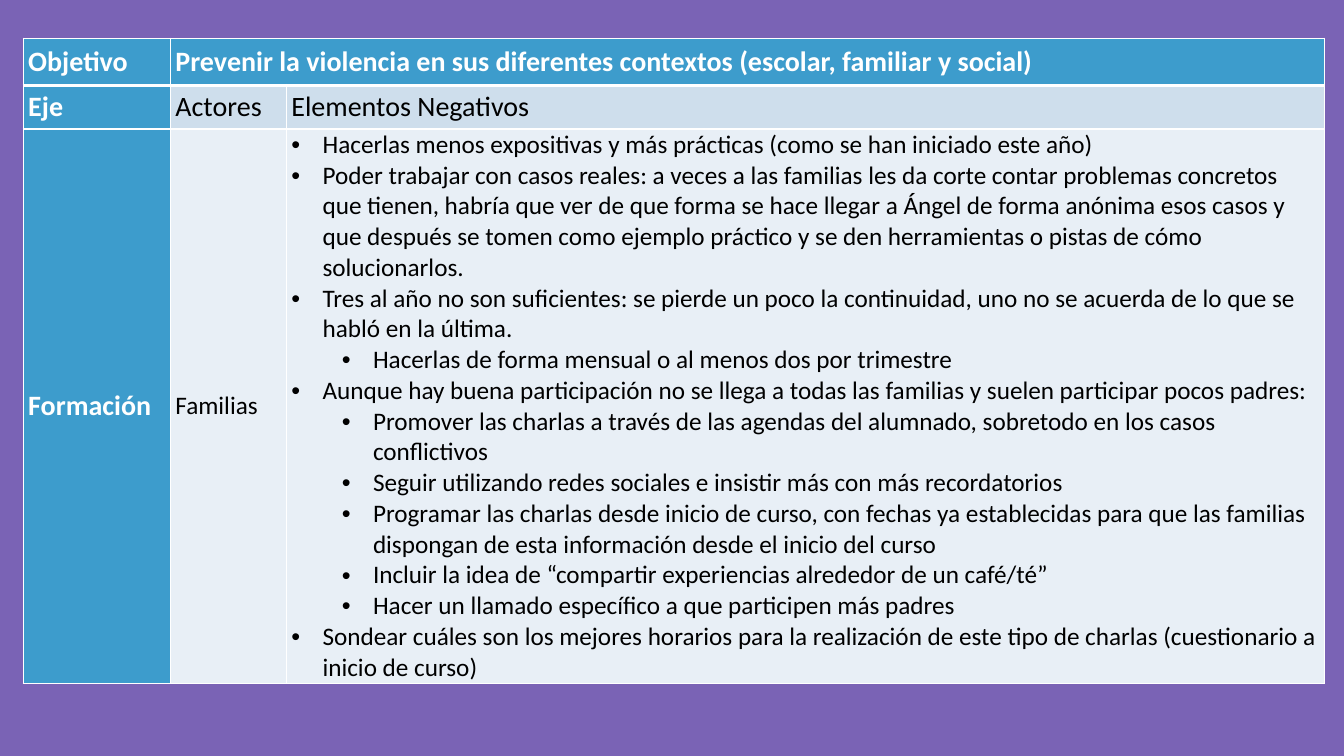
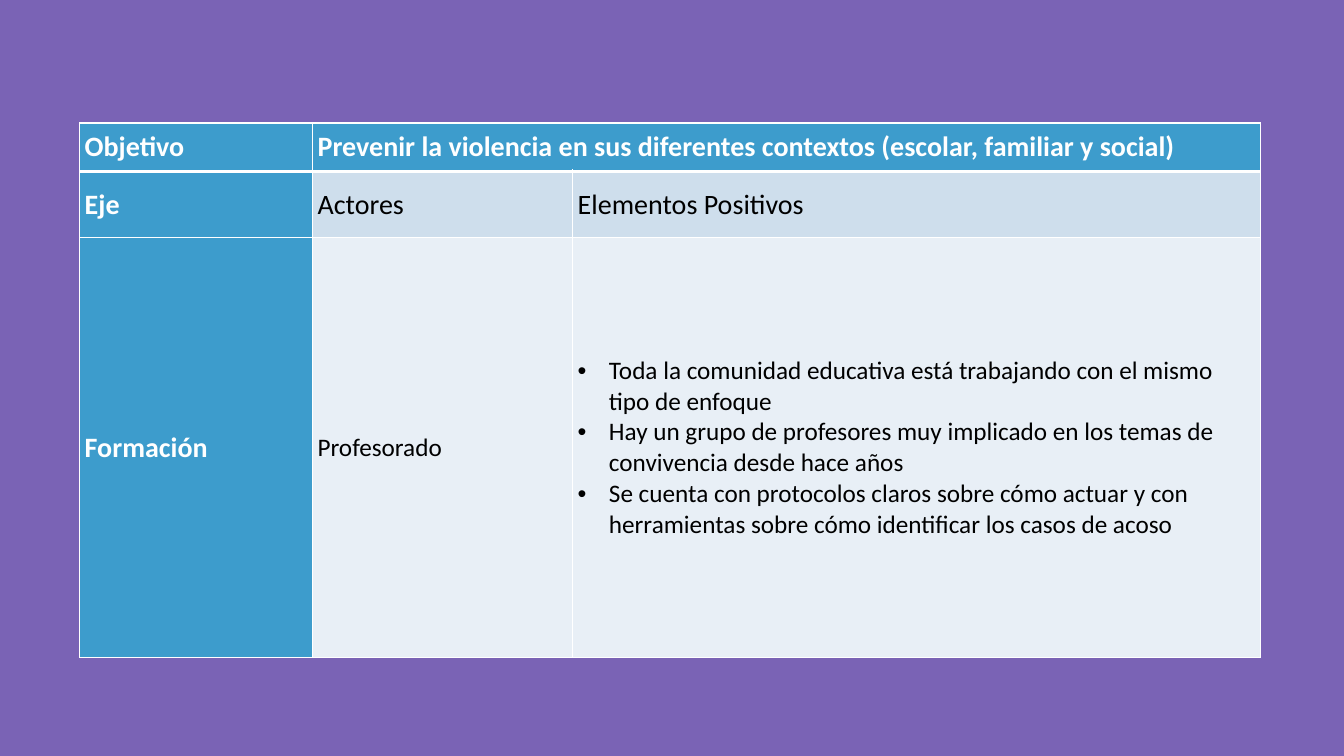
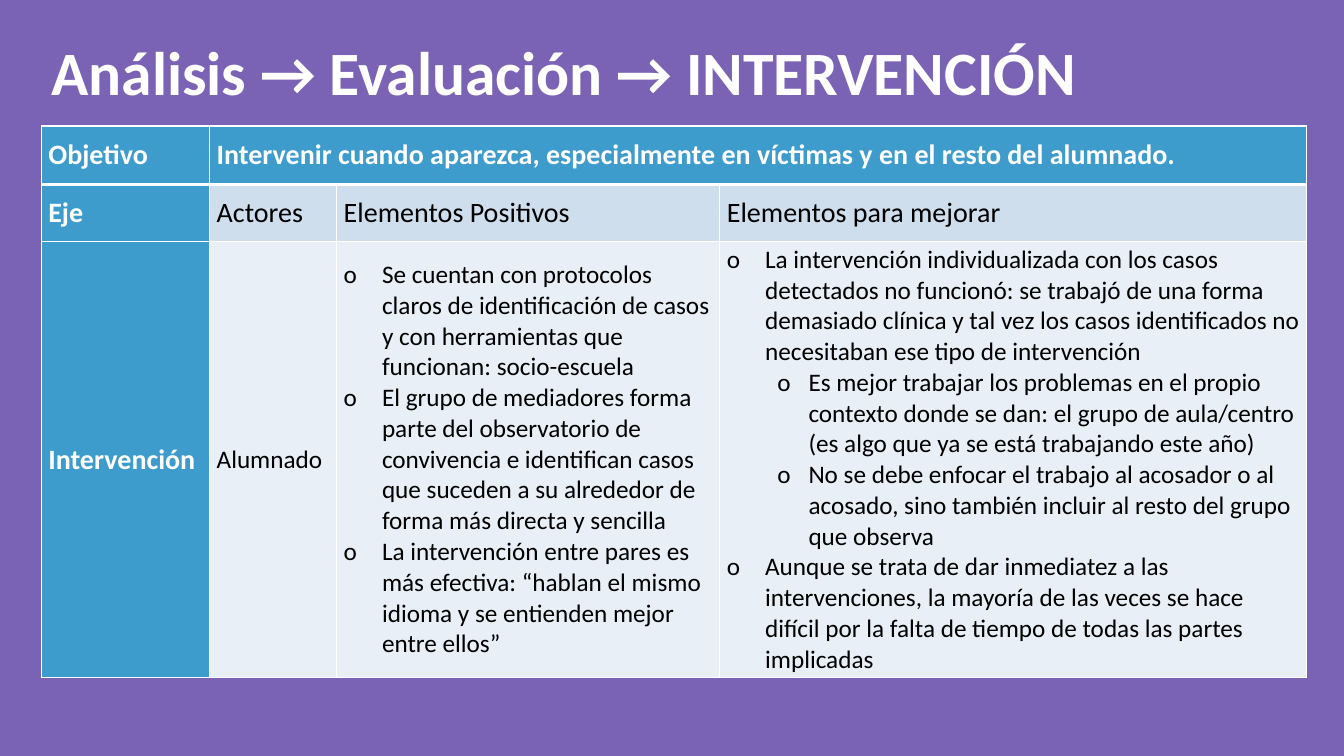
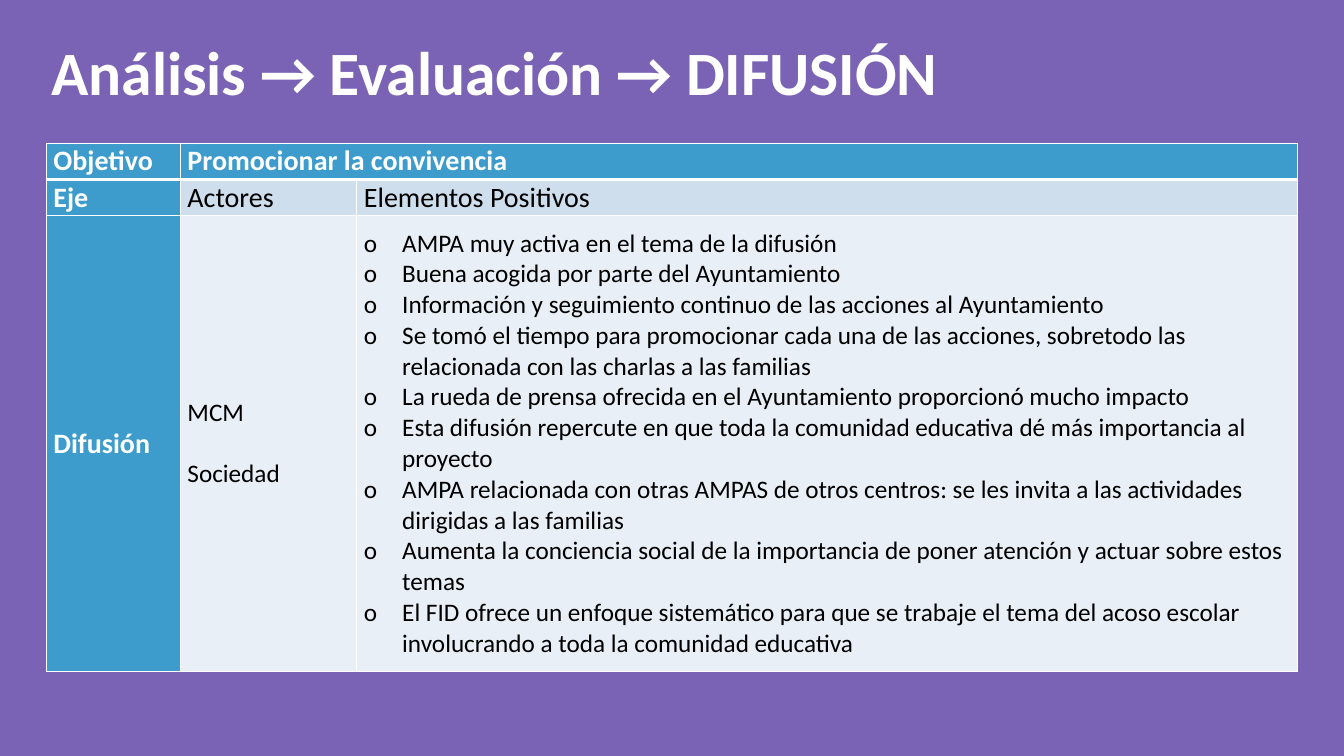
from dataclasses import dataclass

from lxml import etree
from pptx import Presentation
from pptx.dml.color import RGBColor
from pptx.enum.text import MSO_ANCHOR, PP_ALIGN
from pptx.oxml.ns import qn
from pptx.util import Inches, Pt

LEFT = PP_ALIGN.LEFT
TOP, MIDDLE = MSO_ANCHOR.TOP, MSO_ANCHOR.MIDDLE
TITLE_ONLY, BLANK = 5, 6


@dataclass(frozen=True)
class Theme:
    font: str = "Calibri"
    back: str = "7A63B5"
    head: str = "3D9CCC"
    band: str = "CEDEEC"
    pale: str = "E8EFF6"
    white: str = "FFFFFF"
    black: str = "000000"
    title: int = 44
    label: int = 20
    body: int = 18
    thin: int = 1
    thick: int = 3


T = Theme()

# Content: a list in a cell holds bullets, a list within it holds sub-bullets
PREVENT = "Prevenir la violencia en sus diferentes contextos (escolar, familiar y social)"

SLIDES = [
    dict(
        at=(0.23, 0.38), cols=(1.46, 1.15, 10.3), rows=(0.47, 0.43, 5.5),
        pad=0.05, mark="•", hang=0.31,
        goal=PREVENT, heads=("Elementos Negativos",),
        axis="Formación", actors=("Familias",),
        cells=[[
            "Hacerlas menos expositivas y más prácticas (como se han iniciado este año)",
            "Poder trabajar con casos reales: a veces a las familias les da corte contar problemas concretos que tienen, habría que ver de que forma se hace llegar a Ángel de forma anónima esos casos y que después se tomen como ejemplo práctico y se den herramientas o pistas de cómo solucionarlos.",
            "Tres al año no son suficientes: se pierde un poco la continuidad, uno no se acuerda de lo que se habló en la última.",
            ["Hacerlas de forma mensual o al menos dos por trimestre"],
            "Aunque hay buena participación no se llega a todas las familias y suelen participar pocos padres:",
            [
                "Promover las charlas a través de las agendas del alumnado, sobretodo en los casos conflictivos",
                "Seguir utilizando redes sociales e insistir más con más recordatorios",
                "Programar las charlas desde inicio de curso, con fechas ya establecidas para que las familias dispongan de esta información desde el inicio del curso",
                "Incluir la idea de “compartir experiencias alrededor de un café/té”",
                "Hacer un llamado específico a que participen más padres",
            ],
            "Sondear cuáles son los mejores horarios para la realización de este tipo de charlas (cuestionario a inicio de curso)",
        ]],
    ),
    dict(
        at=(0.79, 1.22), cols=(2.31, 2.58, 6.82), rows=(0.48, 0.66, 4.16),
        pad=0.05, mark="•", hang=0.31,
        goal=PREVENT, heads=("Elementos Positivos",),
        axis="Formación", actors=("Profesorado",),
        cells=[[
            "Toda la comunidad educativa está trabajando con el mismo tipo de enfoque",
            "Hay un grupo de profesores muy implicado en los temas de convivencia desde hace años",
            "Se cuenta con protocolos claros sobre cómo actuar y con herramientas sobre cómo identificar los casos de acoso",
        ]],
    ),
    dict(
        title="Análisis → Evaluación → INTERVENCIÓN", wide=12.06,
        at=(0.41, 1.25), cols=(1.67, 1.26, 3.8, 5.82), rows=(0.58, 0.57, 4.32),
        pad=0.07, mark="o", hang=0.38,
        goal="Intervenir cuando aparezca, especialmente en víctimas y en el resto del alumnado.",
        heads=("Elementos Positivos", "Elementos para mejorar"),
        axis="Intervención", actors=("Alumnado",),
        cells=[
            [
                "Se cuentan con protocolos claros de identificación de casos y con herramientas que funcionan: socio-escuela",
                "El grupo de mediadores forma parte del observatorio de convivencia e identifican casos que suceden a su alrededor de forma más directa y sencilla",
                "La intervención entre pares es más efectiva: “hablan el mismo idioma y se entienden mejor entre ellos”",
            ],
            [
                "La intervención individualizada con los casos detectados no funcionó: se trabajó de una forma demasiado clínica y tal vez los casos identificados no necesitaban ese tipo de intervención",
                [
                    "Es mejor trabajar los problemas en el propio contexto donde se dan: el grupo de aula/centro (es algo que ya se está trabajando este año)",
                    "No se debe enfocar el trabajo al acosador o al acosado, sino también incluir al resto del grupo que observa",
                ],
                "Aunque se trata de dar inmediatez a las intervenciones, la mayoría de las veces se hace difícil por la falta de tiempo de todas las partes implicadas",
            ],
        ],
    ),
    dict(
        title="Análisis → Evaluación → DIFUSIÓN", wide=10.36,
        at=(0.46, 1.42), cols=(1.33, 1.75, 9.33), rows=(0.36, 0.36, 4.52),
        pad=0.07, mark="o", hang=0.38,
        goal="Promocionar la convivencia", heads=("Elementos Positivos",),
        axis="Difusión", actors=("MCM", "Sociedad"),
        cells=[[
            "AMPA muy activa en el tema de la difusión",
            "Buena acogida por parte del Ayuntamiento",
            "Información y seguimiento continuo de las acciones al Ayuntamiento",
            "Se tomó el tiempo para promocionar cada una de las acciones, sobretodo las relacionada con las charlas a las familias",
            "La rueda de prensa ofrecida en el Ayuntamiento proporcionó mucho impacto",
            "Esta difusión repercute en que toda la comunidad educativa dé más importancia al proyecto",
            "AMPA relacionada con otras AMPAS de otros centros: se les invita a las actividades dirigidas a las familias",
            "Aumenta la conciencia social de la importancia de poner atención y actuar sobre estos temas",
            "El FID ofrece un enfoque sistemático para que se trabaje el tema del acoso escolar involucrando a toda la comunidad educativa",
        ]],
    ),
]

SUB_LEFT, SUB_HANG = 0.81, 0.31


def levels(items):
    """Give (level, text) pairs for a list with nested sub-lists."""
    for item in items:
        if isinstance(item, str):
            yield 0, item
        else:
            for sub in item:
                yield 1, sub


def bullet(para, mark, left, hang):
    props = para._p.get_or_add_pPr()
    props.set("marL", str(Inches(left)))
    props.set("indent", str(-Inches(hang)))
    face = "Arial" if mark == "•" else T.font
    etree.SubElement(props, qn("a:buFont"), typeface=face)
    etree.SubElement(props, qn("a:buChar"), char=mark)


def put(frame, items, size=T.body, color=T.black, bold=False, mark=None, hang=0, gap=0):
    frame.word_wrap = True
    for i, (level, text) in enumerate(levels(items)):
        para = frame.paragraphs[0] if i == 0 else frame.add_paragraph()
        para.alignment = LEFT
        para.level = level
        if i and gap:
            para.space_before = Pt(gap)
        if mark:
            bullet(para, mark, *((SUB_LEFT, SUB_HANG) if level else (hang, hang)))
        run = para.add_run()
        run.text = text
        font = run.font
        font.name, font.size, font.bold = T.font, Pt(size), bold
        font.color.rgb = RGBColor.from_string(color)


def border(cell, row):
    props = cell._tc.get_or_add_tcPr()
    thick = {0: "lnB", 1: "lnT"}.get(row)
    for side in ("lnL", "lnR", "lnT", "lnB"):
        width = T.thick if side == thick else T.thin
        line = etree.SubElement(props, qn("a:" + side), w=str(Pt(width)))
        fill = etree.SubElement(line, qn("a:solidFill"))
        etree.SubElement(fill, qn("a:srgbClr"), val=T.white)


def add_grid(slide, data):
    cols, rows = data["cols"], data["rows"]
    frame = slide.shapes.add_table(
        len(rows), len(cols), *map(Inches, (*data["at"], sum(cols), sum(rows))))
    table = frame.table
    table.first_row = table.horz_banding = False
    for part, size in zip(table.columns, cols):
        part.width = Inches(size)
    for part, size in zip(table.rows, rows):
        part.height = Inches(size)

    # Cell fills, borders and margins
    for r, tint in enumerate((T.head, T.band, T.pale)):
        for c in range(len(cols)):
            cell = table.cell(r, c)
            border(cell, r)
            cell.fill.solid()
            cell.fill.fore_color.rgb = RGBColor.from_string(tint if c else T.head)
            cell.vertical_anchor = MIDDLE
            cell.margin_left = cell.margin_right = Inches(data["pad"])
            cell.margin_top = cell.margin_bottom = 0
    table.cell(0, 1).merge(table.cell(0, len(cols) - 1))

    # Labels
    strong = dict(size=T.label, color=T.white, bold=True)
    for r, text in enumerate(("Objetivo", "Eje", data["axis"])):
        put(table.cell(r, 0).text_frame, [text], **strong)
    put(table.cell(0, 1).text_frame, [data["goal"]], **strong)
    for c, text in enumerate(("Actores", *data["heads"]), 1):
        put(table.cell(1, c).text_frame, [text], size=T.label)

    # Actors and bullet lists
    put(table.cell(2, 1).text_frame, data["actors"], gap=22)
    for c, items in enumerate(data["cells"], 2):
        put(table.cell(2, c).text_frame, items, mark=data["mark"], hang=data["hang"])


def add_title(slide, text, wide):
    title = slide.shapes.title
    title.left, title.top, title.width, title.height = map(Inches, (0.41, 0.29, wide, 0.84))
    title.text_frame.vertical_anchor = TOP
    put(title.text_frame, [text], size=T.title, color=T.white, bold=True)


def main():
    deck = Presentation()
    deck.slide_width, deck.slide_height = Inches(13.33), Inches(7.5)
    back = deck.slide_master.background.fill
    back.solid()
    back.fore_color.rgb = RGBColor.from_string(T.back)
    for data in SLIDES:
        titled = "title" in data
        slide = deck.slides.add_slide(deck.slide_layouts[TITLE_ONLY if titled else BLANK])
        if titled:
            add_title(slide, data["title"], data["wide"])
        add_grid(slide, data)
    deck.save("out.pptx")


if __name__ == "__main__":
    main()
